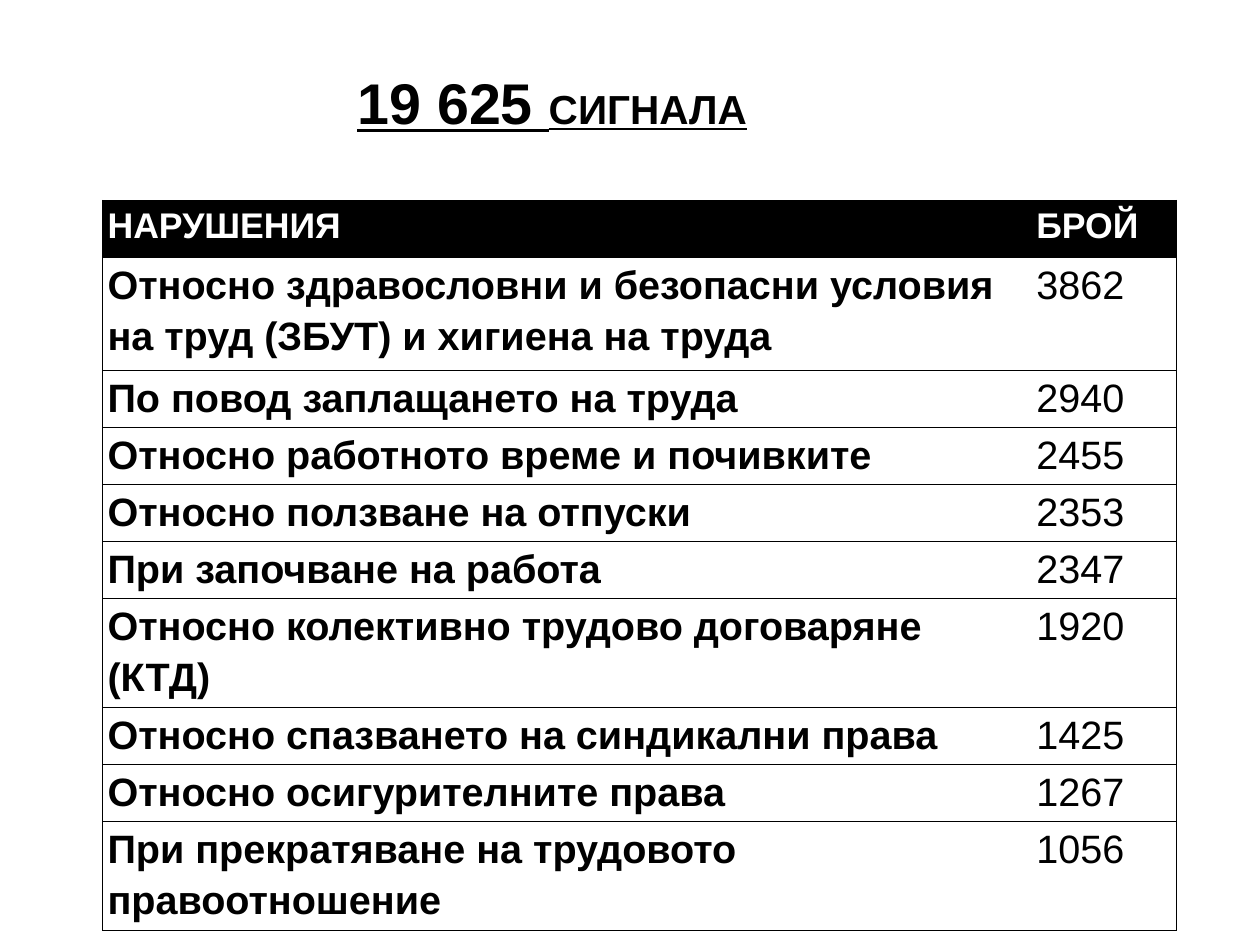
from dataclasses import dataclass

from lxml import etree
from pptx import Presentation
from pptx.dml.color import RGBColor
from pptx.enum.text import MSO_AUTO_SIZE
from pptx.oxml.ns import qn
from pptx.slide import Slide
from pptx.table import _Cell
from pptx.text.text import _Paragraph
from pptx.util import Inches, Pt

FIT_SHAPE = MSO_AUTO_SIZE.SHAPE_TO_FIT_TEXT


@dataclass(frozen=True)
class Theme:
    font: str = "Arial"
    ink: str = "000000"
    paper: str = "FFFFFF"
    total_size: int = 58
    caption_size: int = 41
    header_size: int = 36
    body_size: int = 40
    border_width: float = 0.75
    line_spacing: float = 1.15


@dataclass(frozen=True)
class Violation:
    name: str
    count: str
    height: float = 0.8


THEME = Theme()
COLUMN_WIDTHS = (13.04, 2.04)
HEADER = Violation("НАРУШЕНИЯ", "БРОЙ")
VIOLATIONS = (
    Violation("Относно здравословни и безопасни условия на труд (ЗБУТ) и хигиена на труда", "3862", 1.59),
    Violation("По повод заплащането на труда", "2940"),
    Violation("Относно работното време и почивките", "2455"),
    Violation("Относно ползване на отпуски", "2353"),
    Violation("При започване на работа", "2347"),
    Violation("Относно колективно трудово договаряне (КТД)", "1920", 1.53),
    Violation("Относно спазването на синдикални права", "1425"),
    Violation("Относно осигурителните права", "1267"),
    Violation("При прекратяване на трудовото правоотношение", "1056", 1.53),
)


def add_text(para: _Paragraph, text: str, *, size: int, color: str = THEME.ink,
             bold: bool = True, underline: bool = False) -> None:
    span = para.add_run()
    span.text = text
    span.font.name = THEME.font
    span.font.size = Pt(size)
    span.font.bold = bold
    span.font.underline = underline
    span.font.color.rgb = RGBColor.from_string(color)


def set_borders(cell: _Cell, visible_sides: str) -> None:
    properties = cell._tc.get_or_add_tcPr()
    for position, side in enumerate("LRTB"):
        line = etree.Element(qn(f"a:ln{side}"), w=str(Pt(THEME.border_width)))
        if side in visible_sides:
            fill = etree.SubElement(line, qn("a:solidFill"))
            etree.SubElement(fill, qn("a:srgbClr"), val=THEME.ink)
        else:
            etree.SubElement(line, qn("a:noFill"))
        properties.insert(position, line)


def fill_cell(cell: _Cell, text: str, *, header: bool, first: bool) -> None:
    cell.margin_left = cell.margin_right = Inches(0.07)
    cell.margin_top = cell.margin_bottom = 0
    cell.fill.solid()
    cell.fill.fore_color.rgb = RGBColor.from_string(THEME.ink if header else THEME.paper)
    set_borders(cell, "LTB" if first else "RTB")
    para = cell.text_frame.paragraphs[0]
    para.line_spacing = THEME.line_spacing
    add_text(para, text,
             size=THEME.header_size if header else THEME.body_size,
             color=THEME.paper if header else THEME.ink,
             bold=header or first)


def add_title(page: Slide) -> None:
    box = page.shapes.add_textbox(Inches(4.92), Inches(0.89), Inches(5.72), Inches(1.08))
    box.text_frame.word_wrap = False
    box.text_frame.auto_size = FIT_SHAPE
    para = box.text_frame.paragraphs[0]
    add_text(para, "19 625 ", size=THEME.total_size, underline=True)
    add_text(para, "СИГНАЛА", size=THEME.caption_size, underline=True)


def add_violations(page: Slide) -> None:
    entries = (HEADER, *VIOLATIONS)
    frame = page.shapes.add_table(
        len(entries), len(COLUMN_WIDTHS), Inches(1.44), Inches(2.81),
        Inches(sum(COLUMN_WIDTHS)), Inches(sum(entry.height for entry in entries)))
    table = frame.table
    table.horz_banding = False
    for column, width in zip(table.columns, COLUMN_WIDTHS):
        column.width = Inches(width)
    for row, entry in zip(table.rows, entries):
        row.height = Inches(entry.height)
        for index, text in enumerate((entry.name, entry.count)):
            fill_cell(row.cells[index], text, header=entry is HEADER, first=index == 0)


def main() -> None:
    deck = Presentation()
    deck.slide_width = Inches(17.69)
    deck.slide_height = Inches(13.27)
    page = deck.slides.add_slide(deck.slide_layouts[6])
    add_title(page)
    add_violations(page)
    deck.save("out.pptx")


if __name__ == "__main__":
    main()
